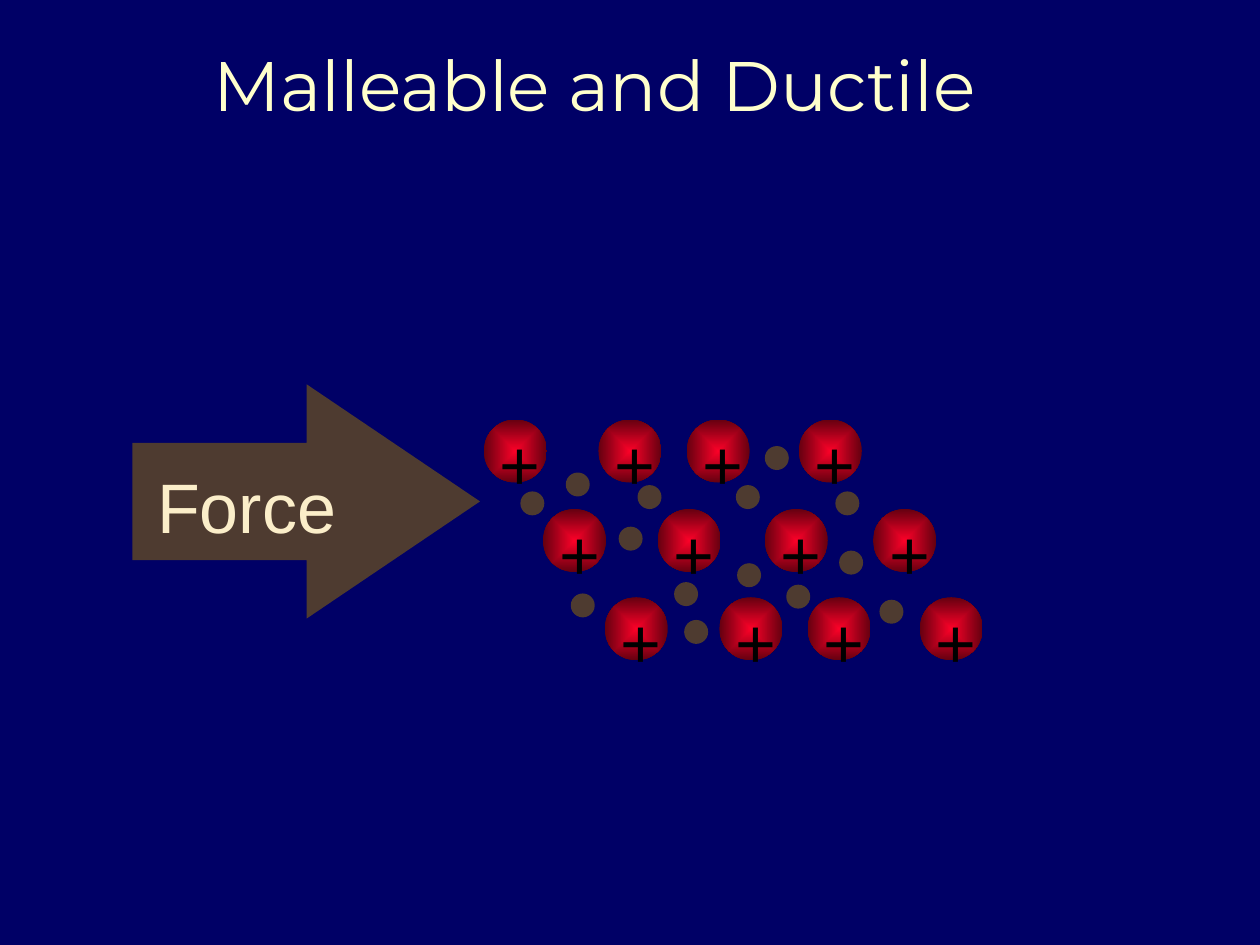
import lxml.etree
import pptx
import pptx.dml.color
import pptx.enum.shapes
import pptx.enum.text
import pptx.oxml.ns
import pptx.util
from pptx.util import Inches

SHAPE = pptx.enum.shapes.MSO_SHAPE
ANCHOR = pptx.enum.text.MSO_ANCHOR
ALIGN = pptx.enum.text.PP_ALIGN

NAVY, BROWN = "000066", "4E3B30"
ION_CENTRE, ION_EDGE = "FC0128", "650010"
ION_SIZE, ELECTRON_SIZE = 0.5, 0.19

OUTER_OFFSETS = (0, 0.91, 1.61, 2.5)
MIDDLE_OFFSETS = (0, 0.91, 1.76, 2.62)
# Left edge, top edge and horizontal offsets of each row of ions
ION_ROWS = (
    (3.84, 3.33, OUTER_OFFSETS),
    (4.31, 4.04, MIDDLE_OFFSETS),
    (4.8, 4.74, OUTER_OFFSETS),
)
ELECTRONS = (
    (5.84, 3.85), (4.49, 3.75), (4.53, 4.71), (4.91, 4.18), (5.06, 3.85),
    (5.43, 4.92), (6.98, 4.76), (5.85, 4.47), (6.24, 4.64), (6.66, 4.37),
    (6.63, 3.9), (6.07, 3.54), (4.13, 3.9), (5.35, 4.62),
)


def colour(value):
    return pptx.dml.color.RGBColor.from_string(value)


def add_text(shapes, text, left, top, width, height, *, color, font="Arial",
             size=40, align=ALIGN.LEFT, anchor=ANCHOR.TOP,
             inset_top=0.11, inset_bottom=0.05):
    box = shapes.add_textbox(Inches(left), Inches(top), Inches(width), Inches(height))
    frame = box.text_frame
    frame.word_wrap = True
    frame.vertical_anchor = anchor
    frame.margin_top = Inches(inset_top)
    frame.margin_bottom = Inches(inset_bottom)
    para = frame.paragraphs[0]
    para.alignment = align
    span = para.add_run()
    span.text = text
    span.font.name = font
    span.font.size = pptx.util.Pt(size)
    span.font.color.rgb = colour(color)


def add_plain_shape(shapes, kind, left, top, width, height, fill=BROWN):
    shape = shapes.add_shape(kind, Inches(left), Inches(top), Inches(width), Inches(height))
    shape.shadow.inherit = False
    shape.line.fill.background()
    shape.fill.solid()
    shape.fill.fore_color.rgb = colour(fill)
    return shape


def set_radial_fill(shape, centre, edge):
    """Fill with a gradient that runs from the centre to the outline."""
    shape.fill.gradient()
    for stop, value in zip(shape.fill.gradient_stops, (centre, edge)):
        stop.color.rgb = colour(value)
    qn = pptx.oxml.ns.qn
    gradient = shape.element.spPr.find(qn("a:gradFill"))
    gradient.remove(gradient.find(qn("a:lin")))
    radial = lxml.etree.SubElement(gradient, qn("a:path"), path="shape")
    lxml.etree.SubElement(radial, qn("a:fillToRect"),
                          dict.fromkeys("ltrb", "50000"))


def add_ion(shapes, left, top):
    ion = add_plain_shape(shapes, SHAPE.OVAL, left, top, ION_SIZE, ION_SIZE)
    set_radial_fill(ion, ION_CENTRE, ION_EDGE)
    add_text(shapes, "+", left + 0.03, top - 0.1, 0.33, 0.77, color="000000")


def add_lattice(page):
    lattice = page.shapes.add_group_shape().shapes
    for left, top, offsets in ION_ROWS:
        for offset in offsets:
            add_ion(lattice, left + offset, top)
    for left, top in ELECTRONS:
        add_plain_shape(lattice, SHAPE.OVAL, left, top, ELECTRON_SIZE, ELECTRON_SIZE)


def add_force_arrow(page):
    arrow = add_plain_shape(page.shapes, SHAPE.RIGHT_ARROW, 1.05, 3.05, 2.76, 1.86)
    arrow.adjustments[0] = 0.5
    arrow.adjustments[1] = 0.74
    add_text(page.shapes, "Force", 1.15, 3.57, 1.76, 0.77, color="FBEEC9")


def main():
    deck = pptx.Presentation()
    deck.slide_width, deck.slide_height = Inches(10), Inches(7.5)
    page = deck.slides.add_slide(deck.slide_layouts[6])
    page.background.fill.solid()
    page.background.fill.fore_color.rgb = colour(NAVY)
    add_text(page.shapes, "Malleable and Ductile", 0.5, 0.16, 8.44, 0.86,
             color="FFFFCC", font="Montserrat", align=ALIGN.CENTER,
             anchor=ANCHOR.BOTTOM, inset_top=0.05, inset_bottom=0.02)
    add_lattice(page)
    add_force_arrow(page)
    deck.save("out.pptx")


if __name__ == "__main__":
    main()
